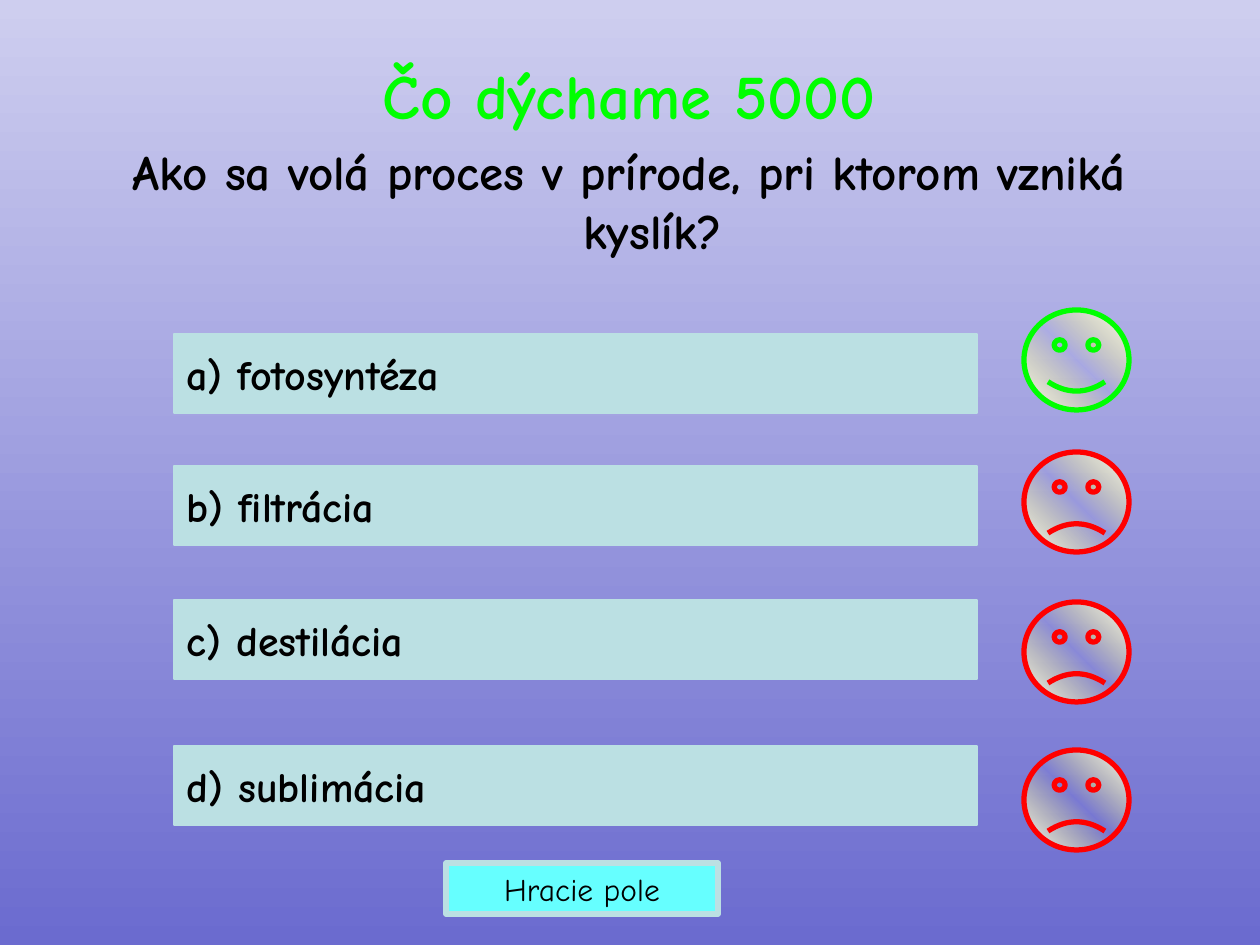
from pptx import Presentation
from pptx import util as u
from pptx.dml.color import RGBColor
from pptx.enum import shapes, text
from pptx.oxml import parse_xml
from pptx.oxml.ns import nsdecls, qn

PX = 914400 // 126
FONT = "Comic Neue"
GREEN, RED, BLACK, PALE = "00FF00", "FF0000", "000000", "BBE0E3"

QUESTION = [
    ("Čo dýchame 5000", 36, GREEN),
    ("Ako sa volá proces v prírode, pri ktorom vzniká kyslík?", 28, BLACK),
]
ANSWERS = [
    ("a) fotosyntéza", 334, 310, True),
    ("b) filtrácia", 466, 452, False),
    ("c) destilácia", 600, 602, False),
    ("d) sublimácia", 746, 750, False),
]
BACKGROUND = [(0, "CECEEF", 100), (100, "6B6BCF", 100)]
FACE_GLOW = [(0, "FFFFFF", 100), (50, "FFFF66", 0), (100, "FFFFFF", 100)]


def color(value):
    return RGBColor.from_string(value)


def box(*lengths):
    return [length * PX for length in lengths]


def gradient(fill, element, stops, angle):
    fill.gradient()
    fill.gradient_angle = angle
    stop_list = element.find(".//" + qn("a:gsLst"))
    for stop in list(stop_list):
        stop_list.remove(stop)
    for position, value, opacity in stops:
        stop_list.append(parse_xml(
            f'<a:gs {nsdecls("a")} pos="{position * 1000}"><a:srgbClr val="{value}">'
            f'<a:alpha val="{opacity * 1000}"/></a:srgbClr></a:gs>'))


def write(paragraph, words, size, ink=BLACK, bold=True, align=text.PP_ALIGN.LEFT):
    paragraph.alignment = align
    run = paragraph.add_run()
    run.text = words
    run.font.name, run.font.size, run.font.bold = FONT, u.Pt(size), bold
    run.font.color.rgb = color(ink)


def add_outlined(kind, place, line, width):
    shape = slide.shapes.add_shape(kind, *box(*place))
    shape.shadow.inherit = False
    shape.line.color.rgb = color(line)
    shape.line.width = u.Pt(width)
    return shape


def add_button(words, place, fill, line_width, size, **look):
    button = add_outlined(shapes.MSO_SHAPE.ACTION_BUTTON_CUSTOM, place, PALE, line_width)
    button.fill.solid()
    button.fill.fore_color.rgb = color(fill)
    frame = button.text_frame
    frame.word_wrap = False
    frame.vertical_anchor = text.MSO_ANCHOR.MIDDLE
    write(frame.paragraphs[0], words, size, **look)


def add_face(top, correct):
    face = add_outlined(shapes.MSO_SHAPE.SMILEY_FACE, (1024, top, 105, 100),
                        GREEN if correct else RED, 3)
    face.adjustments[0] = 0.047 if correct else -0.047
    gradient(face.fill, face._element, FACE_GLOW, 45)


deck = Presentation()
deck.slide_width, deck.slide_height = box(1260, 945)
slide = deck.slides.add_slide(deck.slide_layouts[6])
gradient(slide.background.fill, slide.element, BACKGROUND, 270)

question = slide.shapes.add_textbox(*box(49, 50, 1160, 95)).text_frame
question.word_wrap = True
for number, (words, size, ink) in enumerate(QUESTION):
    paragraph = question.add_paragraph() if number else question.paragraphs[0]
    write(paragraph, words, size, ink=ink, align=text.PP_ALIGN.CENTER)
    paragraph.space_before = u.Pt(size * 0.2)
    properties = paragraph._p.get_or_add_pPr()
    properties.set("marL", str(47 * PX))
    properties.set("indent", str(-47 * PX))

for words, top, face_top, correct in ANSWERS:
    add_button(words, (174, top, 803, 79), PALE, 1, 24)
    add_face(face_top, correct)

add_button("Hracie pole", (446, 863, 272, 51), "66FFFF", 3, 18,
           bold=False, align=text.PP_ALIGN.CENTER)

deck.save("out.pptx")
